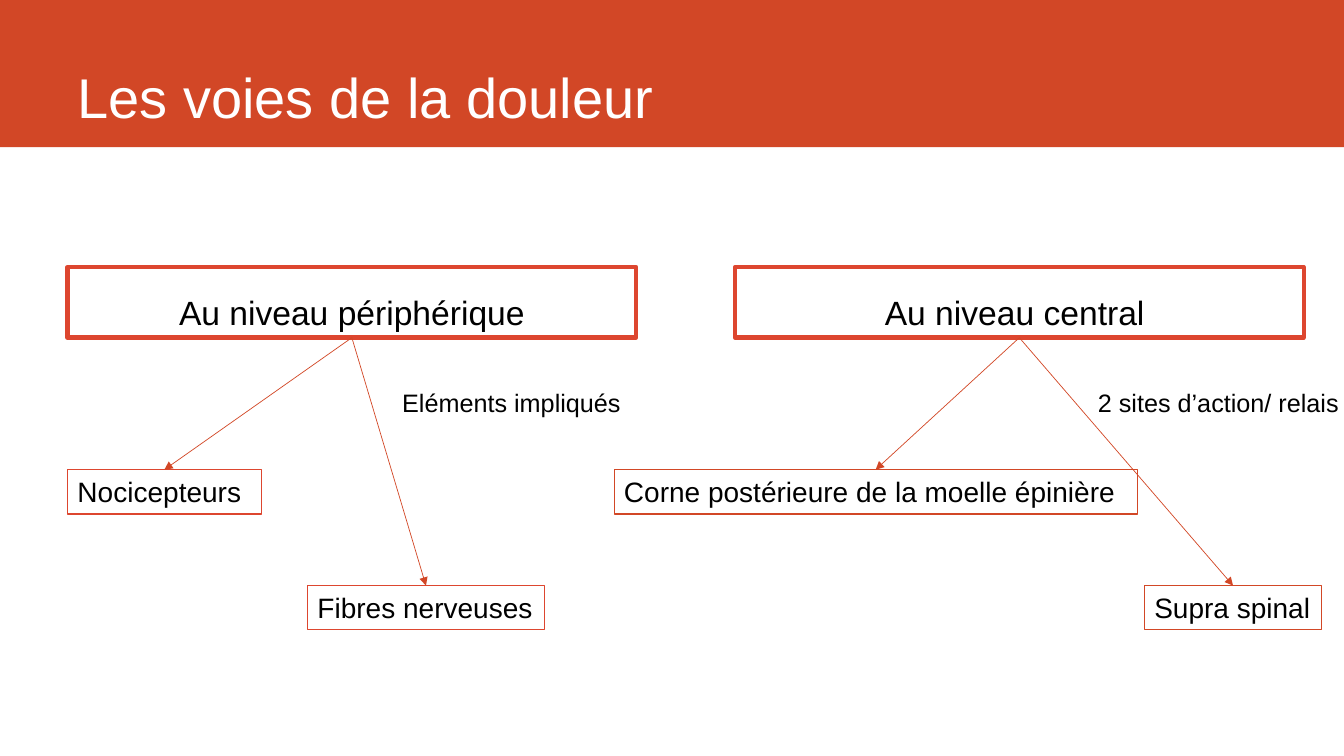
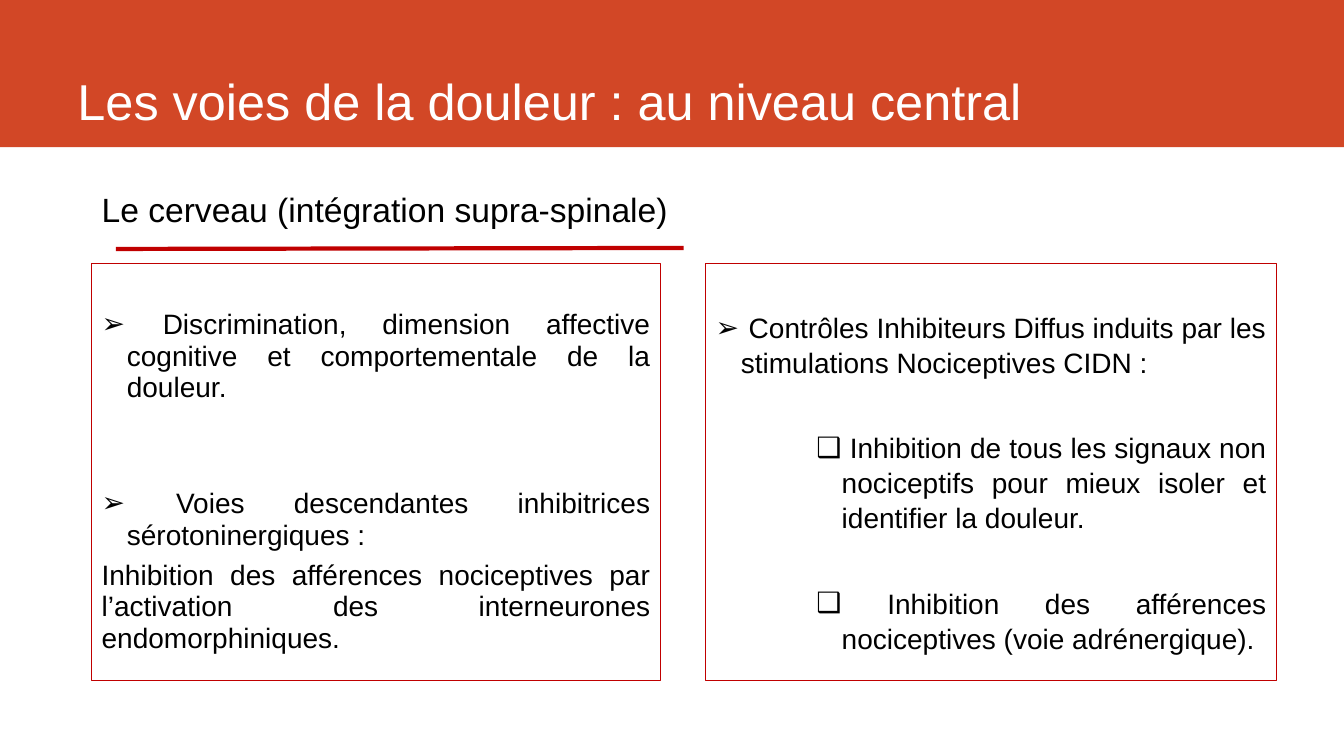
"""Build two slides on the pathways of pain."""
import pptx
import pptx.dml.color
import pptx.enum.shapes
import pptx.enum.text
import pptx.oxml.ns
import pptx.util
from lxml import etree

BAND = pptx.dml.color.RGBColor(0xD2, 0x47, 0x26)
ACCENT = pptx.dml.color.RGBColor(0xDD, 0x46, 0x2F)
RULE = pptx.dml.color.RGBColor(0xC0, 0x00, 0x00)
WHITE = pptx.dml.color.RGBColor(0xFF, 0xFF, 0xFF)
BLACK = pptx.dml.color.RGBColor(0x00, 0x00, 0x00)

EMU_PER_PX = 9144
WIDTH, HEIGHT = 1333, 750
ALIGN = pptx.enum.text.PP_ALIGN
ANCHOR = pptx.enum.text.MSO_ANCHOR
RECTANGLE = pptx.enum.shapes.MSO_SHAPE.RECTANGLE
STRAIGHT = pptx.enum.shapes.MSO_CONNECTOR.STRAIGHT
BOTTOM_SITE, TOP_SITE = 2, 0


def px(length):
    return pptx.util.Emu(length * EMU_PER_PX)


def assign(target, values):
    for name, value in values.items():
        setattr(target, name, value)


def child(parent, tag, **attributes):
    return etree.SubElement(parent, pptx.oxml.ns.qn(tag), attributes)


class Slides:
    font = "Arial"
    frame_format = {"word_wrap": True, "margin_left": px(10), "margin_right": 0,
                    "margin_top": px(5), "margin_bottom": px(5)}

    def __init__(self):
        self.deck = pptx.Presentation()
        assign(self.deck, {"slide_width": px(WIDTH), "slide_height": px(HEIGHT)})
        self.page = None

    def start(self, title, size):
        self.page = self.deck.slides.add_slide(self.deck.slide_layouts[6])
        self.box(0, 0, WIDTH, 146, fill=BAND)
        self.label(67, 0, 1174, 134, title, size, WHITE, anchor=ANCHOR.BOTTOM)

    def box(self, left, top, width, height, fill=None, line=None, weight=0.75):
        box = self.page.shapes.add_shape(
            RECTANGLE, px(left), px(top), px(width), px(height))
        box.shadow.inherit = False
        if fill is None:
            box.fill.background()
        else:
            box.fill.solid()
            box.fill.fore_color.rgb = fill
        if line is None:
            box.line.fill.background()
        else:
            box.line.color.rgb = line
            box.line.width = pptx.util.Pt(weight)
        return box

    def label(self, left, top, width, height, text, size, color=BLACK,
              anchor=ANCHOR.TOP, spacing=1.0):
        box = self.page.shapes.add_textbox(
            px(left), px(top), px(width), px(height))
        assign(box.text_frame, {**self.frame_format, "vertical_anchor": anchor})
        self.add_text(box.text_frame.paragraphs[0], text, size, color,
                      {"line_spacing": spacing})

    def add_text(self, para, text, size, color, layout):
        assign(para, layout)
        span = para.add_run()
        span.text = text
        assign(span.font, {"name": self.font, "size": pptx.util.Pt(size)})
        span.font.color.rgb = color

    def caption_box(self, left, top, width, height, text, size, line, weight=0.75,
                    align=ALIGN.LEFT, anchor=ANCHOR.TOP, spacing=1.0):
        box = self.box(left, top, width, height, line=line, weight=weight)
        right = px(10) if align == ALIGN.CENTER else 0
        assign(box.text_frame, {**self.frame_format, "margin_right": right,
                                "vertical_anchor": anchor})
        self.add_text(box.text_frame.paragraphs[0], text, size, BLACK,
                      {"alignment": align, "line_spacing": spacing})
        return box

    def heading_box(self, left, text):
        return self.caption_box(left, 265, 564, 70, text, 24, ACCENT, 3,
                                ALIGN.CENTER, ANCHOR.BOTTOM, 0.9)

    def list_box(self, left, width, spacing, items):
        box = self.box(left, 261, width, 414, line=RULE)
        frame = box.text_frame
        assign(frame, {**self.frame_format, "margin_right": px(10),
                       "margin_top": px(46), "vertical_anchor": ANCHOR.TOP})
        for index, (bullet, indent, before, text) in enumerate(items):
            para = frame.add_paragraph() if index else frame.paragraphs[0]
            if bullet:
                properties = para._p.get_or_add_pPr()
                properties.set("marL", str(px(indent)))
                properties.set("indent", str(px(-25)))
                child(properties, "a:buFont", typeface=self.font)
                child(properties, "a:buChar", char=bullet)
            self.add_text(para, text, 20, BLACK,
                          {"alignment": ALIGN.JUSTIFY, "line_spacing": spacing,
                           "space_before": pptx.util.Pt(before)})

    def line(self, start, end, color, weight):
        line = self.page.shapes.add_connector(
            STRAIGHT, *(px(value) for value in (*start, *end)))
        line.line.color.rgb = color
        line.line.width = pptx.util.Pt(weight)
        child(line._element.spPr, "a:effectLst")
        return line

    def arrow(self, source, target):
        arrow = self.line((0, 0), (0, 0), BAND, 0.5)
        arrow.begin_connect(source, BOTTOM_SITE)
        arrow.end_connect(target, TOP_SITE)
        child(arrow._element.spPr.get_or_add_ln(), "a:tailEnd", type="triangle")


def pathways(slides):
    slides.start("Les voies de la douleur", 40)
    branches = [
        (67, "Au niveau périphérique", ACCENT,
         [(67, 466, 192, "Nocicepteurs"), (305, 581, 235, "Fibres nerveuses")]),
        (729, "Au niveau central ", BAND,
         [(609, 466, 519, "Corne postérieure de la moelle épinière"),
          (1135, 581, 176, "Supra spinal")]),
    ]
    for left, heading, color, parts in branches:
        source = slides.heading_box(left, heading)
        for part_left, top, width, text in parts:
            target = slides.caption_box(part_left, top, width, 44, text, 20, color)
            slides.arrow(source, target)
    slides.label(389, 379, 239, 40, "Eléments impliqués", 18)
    slides.label(1079, 379, 261, 40, "2 sites d’action/ relais", 18)


def central_level(slides):
    slides.start("Les voies de la douleur : au niveau central", 36)
    slides.label(91, 163, 587, 70, "Le cerveau (intégration supra-spinale)", 24,
                 anchor=ANCHOR.BOTTOM, spacing=0.9)
    slides.list_box(91, 564, 0.94, [
        ("➢", 25, 0, " Discrimination, dimension affective cognitive et "
                     "comportementale de la douleur."),
        ("➢", 25, 60, " Voies descendantes inhibitrices sérotoninergiques :"),
        (None, 0, 6, "Inhibition des afférences nociceptives par l’activation "
                     "des interneurones endomorphiniques."),
    ])
    slides.list_box(700, 566, 1.04, [
        ("➢", 25, 0, " Contrôles Inhibiteurs Diffus induits par les "
                     "stimulations Nociceptives CIDN :"),
        ("❑", 125, 36, " Inhibition de tous les signaux non nociceptifs pour "
                       "mieux isoler et identifier la douleur."),
        ("❑", 125, 36, " Inhibition des afférences nociceptives "
                       "(voie adrénergique)."),
    ])
    slides.line((115, 247), (678, 246), RULE, 3)


def main():
    slides = Slides()
    pathways(slides)
    central_level(slides)
    slides.deck.save("out.pptx")


if __name__ == "__main__":
    main()
